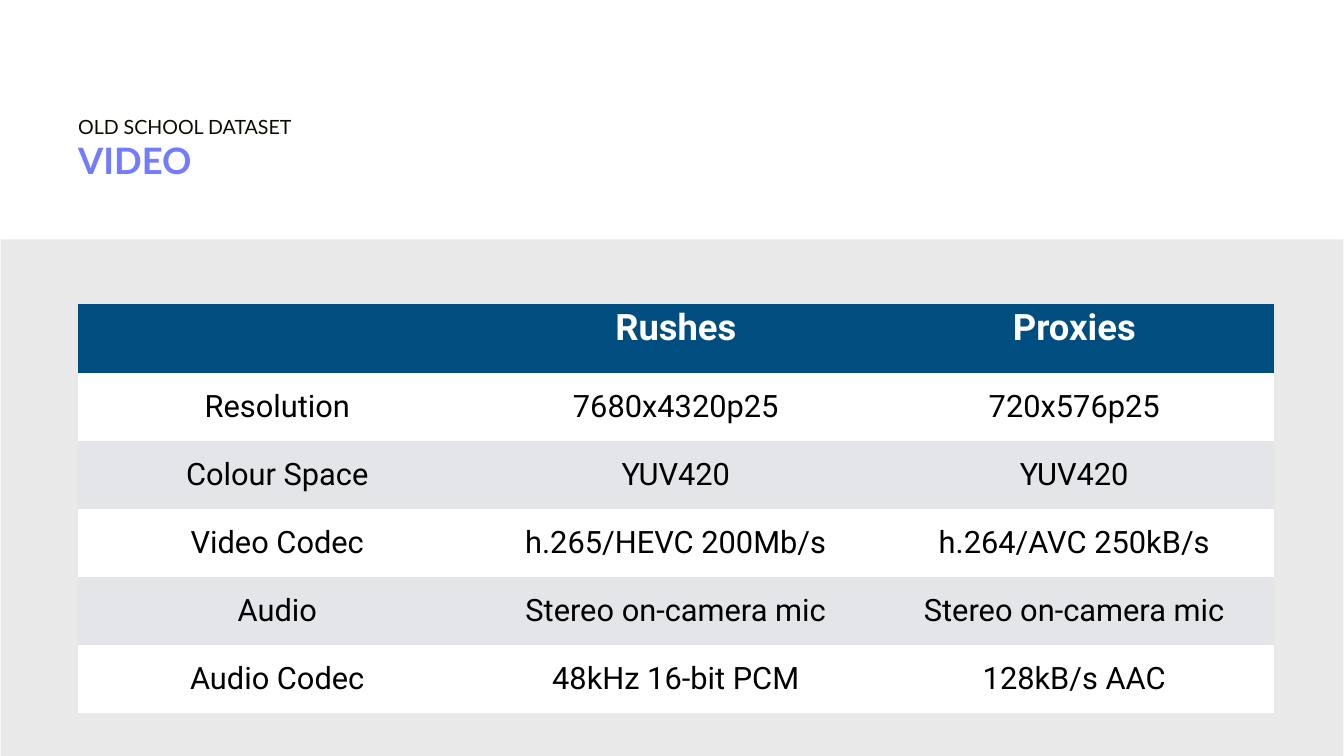
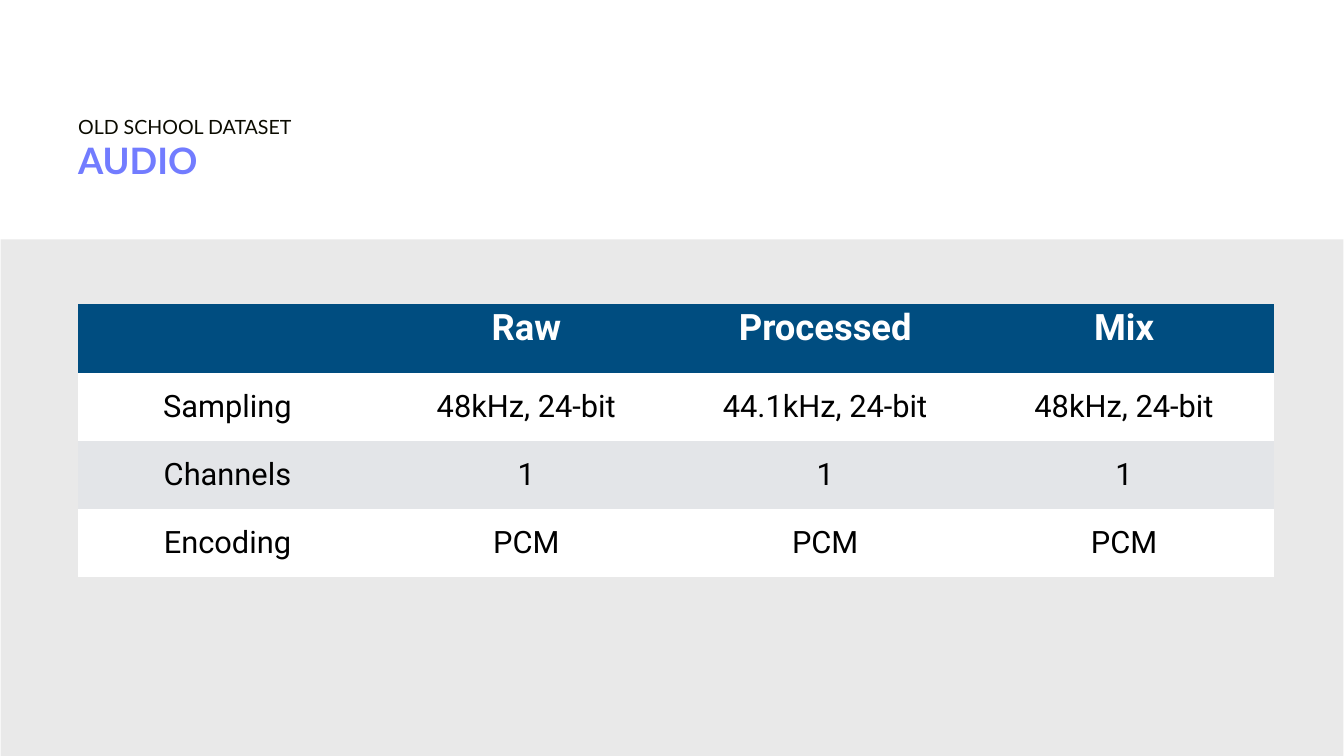
from dataclasses import dataclass

from pptx import Presentation
from pptx.dml.color import RGBColor
from pptx.enum.shapes import MSO_SHAPE as Preset
from pptx.enum.text import MSO_ANCHOR as Anchor, PP_ALIGN as Align
from pptx.oxml.ns import qn
from pptx.presentation import Presentation as Deck
from pptx.slide import Slide
from pptx.table import _Cell as Cell
from pptx.text.text import _Paragraph as Paragraph
from pptx.util import Pt


@dataclass(frozen=True)
class TextStyle:
    font: str
    size: float
    color: str
    bold: bool = False


@dataclass(frozen=True)
class Theme:
    background: str = "FFFFFF"
    band: str = "E9E9E9"
    header_fill: str = "004D80"
    row_fills: tuple[str, str] = ("FFFFFF", "E3E5E8")
    kicker: TextStyle = TextStyle("Lato", 28, "0B0B00")
    title: TextStyle = TextStyle("Lato", 52, "727CFF", True)
    header: TextStyle = TextStyle("Roboto", 52, "FFFFFF", True)
    body: TextStyle = TextStyle("Roboto", 44, "000000")
    unstyled_table: str = "{2D5ABB26-0587-4C30-8999-92F81FD0307C}"


@dataclass(frozen=True)
class Box:
    left: float
    top: float
    width: float
    height: float

    def points(self) -> tuple[Pt, Pt, Pt, Pt]:
        return Pt(self.left), Pt(self.top), Pt(self.width), Pt(self.height)


@dataclass(frozen=True)
class DatasetSlide:
    title: str
    rows: list[list[str]]


THEME = Theme()
SLIDE_WIDTH, SLIDE_HEIGHT = 1920, 1080
MARGIN = 111.6
CONTENT_WIDTH = 1707.8
TABLE_TOP = 434.9
ROW_HEIGHT = 97.4
BAND_BOX = Box(1, 342, 1918, 738)
KICKER_BOX = Box(MARGIN, 157.7, CONTENT_WIDTH, 47.5)
TITLE_BOX = Box(MARGIN, 198, 1150.6, 145.4)
KICKER = "OLD SCHOOL DATASET"

SLIDES = [
    DatasetSlide("VIDEO", [
        ["", "Rushes", "Proxies"],
        ["Resolution", "7680x4320p25", "720x576p25"],
        ["Colour Space", "YUV420", "YUV420"],
        ["Video Codec", "h.265/HEVC 200Mb/s", "h.264/AVC 250kB/s"],
        ["Audio", "Stereo on-camera mic", "Stereo on-camera mic"],
        ["Audio Codec", "48kHz 16-bit PCM", "128kB/s AAC"],
    ]),
    DatasetSlide("AUDIO", [
        ["", "Raw", "Processed", "Mix"],
        ["Sampling", "48kHz, 24-bit", "44.1kHz, 24-bit", "48kHz, 24-bit"],
        ["Channels", "1", "1", "1"],
        ["Encoding", "PCM", "PCM", "PCM"],
    ]),
]


def write(paragraph: Paragraph, text: str, style: TextStyle) -> None:
    paragraph.text = text
    font = paragraph.font
    font.name = style.font
    font.size = Pt(style.size)
    font.bold = style.bold
    font.color.rgb = RGBColor.from_string(style.color)


def add_band(slide: Slide) -> None:
    band = slide.shapes.add_shape(Preset.RECTANGLE, *BAND_BOX.points())
    band.shadow.inherit = False
    band.fill.solid()
    band.fill.fore_color.rgb = RGBColor.from_string(THEME.band)
    band.line.fill.background()


def add_text(slide: Slide, box: Box, text: str, style: TextStyle, anchor: Anchor) -> None:
    frame = slide.shapes.add_textbox(*box.points()).text_frame
    frame.word_wrap = True
    frame.vertical_anchor = anchor
    frame.margin_left = frame.margin_top = frame.margin_right = frame.margin_bottom = 0
    write(frame.paragraphs[0], text, style)


def fill_cell(cell: Cell, text: str, row_index: int) -> None:
    """Style a header cell in row 0, and a body cell with alternating fill below it."""
    is_header = row_index == 0
    fill = THEME.header_fill if is_header else THEME.row_fills[(row_index - 1) % 2]
    cell.fill.solid()
    cell.fill.fore_color.rgb = RGBColor.from_string(fill)
    cell.vertical_anchor = Anchor.TOP if is_header else Anchor.MIDDLE
    paragraph = cell.text_frame.paragraphs[0]
    paragraph.alignment = Align.CENTER
    write(paragraph, text, THEME.header if is_header else THEME.body)


def add_table(slide: Slide, rows: list[list[str]]) -> None:
    box = Box(MARGIN, TABLE_TOP, CONTENT_WIDTH, ROW_HEIGHT * len(rows))
    graphic_frame = slide.shapes.add_table(len(rows), len(rows[0]), *box.points())
    graphic_frame.element.find(".//" + qn("a:tableStyleId")).text = THEME.unstyled_table
    table = graphic_frame.table
    for row_index, row in enumerate(rows):
        for column_index, text in enumerate(row):
            fill_cell(table.cell(row_index, column_index), text, row_index)


def add_dataset_slide(presentation: Deck, content: DatasetSlide) -> None:
    slide = presentation.slides.add_slide(presentation.slide_layouts[6])
    slide.background.fill.solid()
    slide.background.fill.fore_color.rgb = RGBColor.from_string(THEME.background)
    add_band(slide)
    add_text(slide, KICKER_BOX, KICKER, THEME.kicker, Anchor.MIDDLE)
    add_text(slide, TITLE_BOX, content.title, THEME.title, Anchor.TOP)
    add_table(slide, content.rows)


def main() -> None:
    presentation = Presentation()
    presentation.slide_width = Pt(SLIDE_WIDTH)
    presentation.slide_height = Pt(SLIDE_HEIGHT)
    for content in SLIDES:
        add_dataset_slide(presentation, content)
    presentation.save("out.pptx")


if __name__ == "__main__":
    main()
